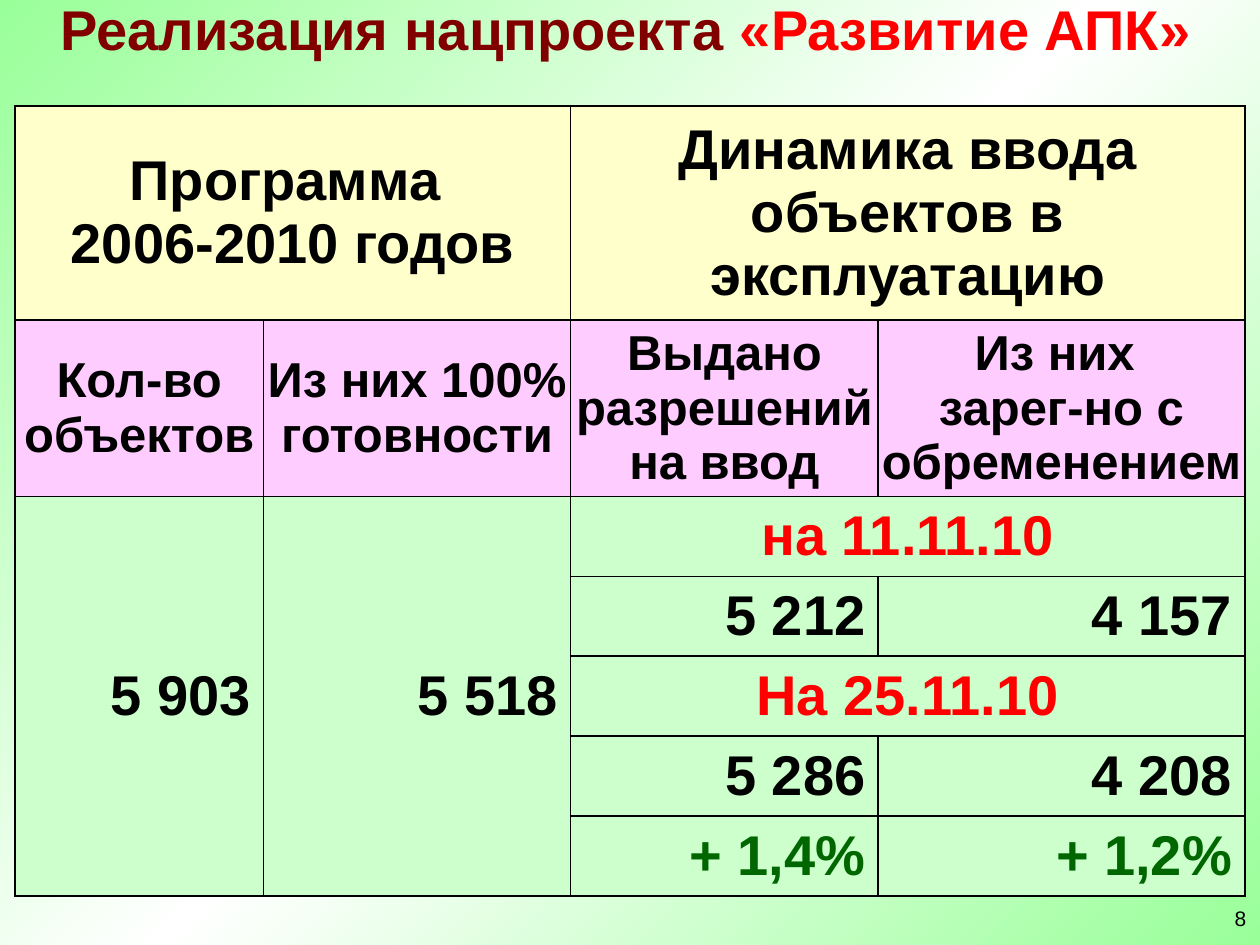
from copy import deepcopy
from dataclasses import dataclass

from lxml import etree
from pptx import Presentation
from pptx.dml.color import RGBColor
from pptx.enum.text import MSO_ANCHOR, MSO_AUTO_SIZE, PP_ALIGN
from pptx.oxml.ns import qn
from pptx.util import Inches, Pt

CENTER, RIGHT, LEFT = PP_ALIGN.CENTER, PP_ALIGN.RIGHT, PP_ALIGN.LEFT
TOP, MIDDLE = MSO_ANCHOR.TOP, MSO_ANCHOR.MIDDLE
NO_AUTOFIT = MSO_AUTO_SIZE.NONE
TITLE_ONLY = 5


@dataclass(frozen=True)
class Theme:
    font: str = "Arial"
    black: str = "000000"
    maroon: str = "800000"
    red: str = "FF0000"
    growth: str = "006600"
    group_fill: str = "FFFFCC"
    heading_fill: str = "FFCCFF"
    data_fill: str = "CCFFCC"
    backdrop: tuple = ("99FF99", "FFFFFF", "99FF99")
    large: int = 32
    heading: int = 28
    small: int = 12
    border: int = 1


class SlideBuilder:
    def __init__(self, slide, theme):
        self.slide = slide
        self.theme = theme

    def style_run(self, run, size, color, bold=True):
        run.font.name = self.theme.font
        run.font.size = Pt(size)
        run.font.bold = bold
        run.font.color.rgb = RGBColor.from_string(color)

    def set_margins(self, holder, horizontal, vertical):
        holder.margin_left = holder.margin_right = Inches(horizontal)
        holder.margin_top = holder.margin_bottom = Inches(vertical)

    def background(self):
        fill = self.slide.background.fill
        fill.gradient()
        fill.gradient_angle = 315
        stop_list = self.slide.element.find(".//" + qn("a:gsLst"))
        stop_list.append(deepcopy(stop_list[0]))
        for stop, color, position in zip(fill.gradient_stops, self.theme.backdrop, (0, 0.5, 1)):
            stop.color.rgb = RGBColor.from_string(color)
            stop.position = position

    def title(self, parts, left, top, width, height):
        heading = self.slide.shapes.title
        heading.left, heading.top = Inches(left), Inches(top)
        heading.width, heading.height = Inches(width), Inches(height)
        frame = heading.text_frame
        frame.auto_size = NO_AUTOFIT
        frame.word_wrap = True
        frame.vertical_anchor = TOP
        self.set_margins(frame, 0, 0)
        paragraph = frame.paragraphs[0]
        paragraph.alignment = CENTER
        paragraph.line_spacing = 0.45
        paragraph.space_before = Pt(9)
        for text, color in parts:
            run = paragraph.add_run()
            run.text = text
            self.style_run(run, self.theme.large, color)

    def page_number(self, number, left, top, width, height):
        box = self.slide.shapes.add_textbox(
            Inches(left), Inches(top), Inches(width), Inches(height))
        frame = box.text_frame
        frame.text = number
        frame.word_wrap = False
        frame.paragraphs[0].alignment = LEFT
        self.style_run(frame.paragraphs[0].runs[0], self.theme.small, self.theme.black, False)

    def table(self, left, top, widths, heights):
        grid = self.slide.shapes.add_table(
            len(heights), len(widths), Inches(left), Inches(top),
            Inches(sum(widths)), Inches(sum(heights))).table
        grid.first_row = grid.horz_banding = False
        for column, width in zip(grid.columns, widths):
            column.width = Inches(width)
        for row, height in zip(grid.rows, heights):
            row.height = Inches(height)
        for cell in grid.iter_cells():
            self.borders(cell)
        return grid

    def borders(self, cell):
        properties = cell._tc.get_or_add_tcPr()
        for index, side in enumerate(("a:lnL", "a:lnR", "a:lnT", "a:lnB")):
            line = etree.Element(qn(side), w=str(Pt(self.theme.border)))
            solid = etree.SubElement(line, qn("a:solidFill"))
            etree.SubElement(solid, qn("a:srgbClr"), val=self.theme.black)
            properties.insert(index, line)

    def cell(self, grid, row, column, text, fill, span=(1, 1), align=CENTER,
             size=None, color=None, margins=(0.1, 0.05)):
        cell = grid.cell(row, column)
        if span != (1, 1):
            cell.merge(grid.cell(row + span[0] - 1, column + span[1] - 1))
        cell.fill.solid()
        cell.fill.fore_color.rgb = RGBColor.from_string(fill)
        cell.vertical_anchor = MIDDLE
        self.set_margins(cell, *margins)
        cell.text_frame.text = text
        for paragraph in cell.text_frame.paragraphs:
            paragraph.alignment = align
            for run in paragraph.runs:
                self.style_run(run, size or self.theme.large, color or self.theme.black)


def main():
    presentation = Presentation()
    presentation.slide_width, presentation.slide_height = Inches(10), Inches(7.5)
    theme = Theme()
    slide = presentation.slides.add_slide(presentation.slide_layouts[TITLE_ONLY])
    builder = SlideBuilder(slide, theme)

    builder.background()
    builder.title(
        [("Реализация нацпроекта ", theme.maroon), ("«Развитие АПК»", theme.red)],
        0.2, 0.21, 9.53, 0.38)

    results = builder.table(0.12, 0.84, [1.97, 2.44, 2.44, 2.91], [1.7, 1.4] + [0.634] * 5)

    groups = ["Программа \n2006-2010 годов", "Динамика ввода объектов в эксплуатацию"]
    for index, group in enumerate(groups):
        builder.cell(results, 0, index * 2, group, theme.group_fill, span=(1, 2))

    headings = [
        "Кол-во объектов ",
        "Из них 100% готовности",
        "Выдано разрешений \nна ввод",
        "Из них \nзарег-но с обременением",
    ]
    for column, heading in enumerate(headings):
        builder.cell(results, 1, column, heading, theme.heading_fill,
                     size=theme.heading, margins=(0.02, 0))

    for column, total in enumerate(["5 903", "5 518"]):
        builder.cell(results, 2, column, total, theme.data_fill, span=(5, 1), align=RIGHT)

    for row, date in [(2, "на 11.11.10"), (4, "На 25.11.10")]:
        builder.cell(results, row, 2, date, theme.data_fill, span=(1, 2), color=theme.red)

    dynamics = [
        (3, ["5 212", "4 157"], theme.black),
        (5, ["5 286", "4 208"], theme.black),
        (6, ["+ 1,4%", "+ 1,2%"], theme.growth),
    ]
    for row, values, color in dynamics:
        for column, value in enumerate(values, start=2):
            builder.cell(results, row, column, value, theme.data_fill, align=RIGHT, color=color)

    builder.page_number("8", 9.7, 7.14, 0.39, 0.3)
    presentation.save("out.pptx")


if __name__ == "__main__":
    main()
